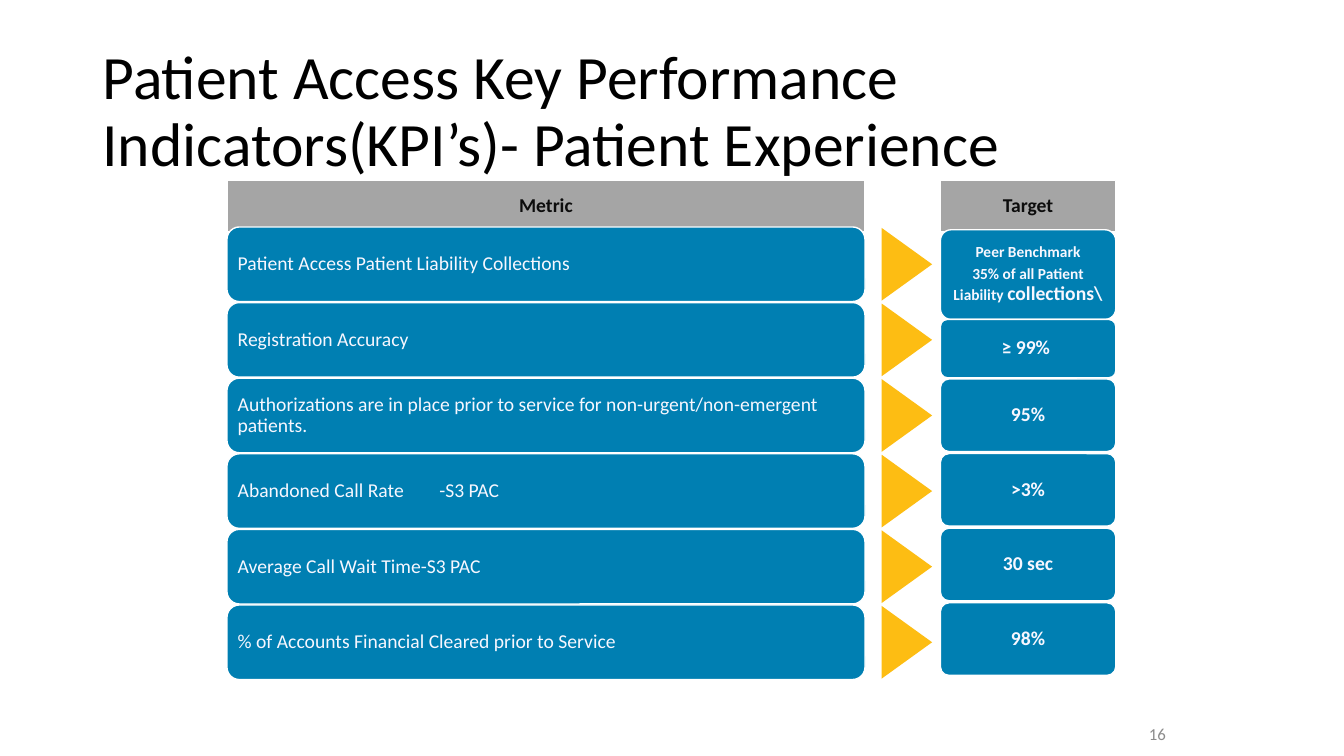
from collections import namedtuple

from pptx import Presentation
from pptx.dml.color import RGBColor
from pptx.enum import shapes, text
from pptx.util import Cm, Pt

BLACK = RGBColor(0x00, 0x00, 0x00)
INK = RGBColor(0x0D, 0x0D, 0x0D)
GRAY = RGBColor(0xA5, 0xA5, 0xA5)
NUMBER_GRAY = RGBColor(0x8C, 0x8C, 0x8C)
BLUE = RGBColor(0x00, 0x7F, 0xB2)
PALE = RGBColor(0xF7, 0xF7, 0xFF)
GOLD = RGBColor(0xFD, 0xBD, 0x13)
WHITE = RGBColor(0xFF, 0xFF, 0xFF)

FONT = "Calibri"
HEADER_HEIGHT = 1.3
CARD_HEIGHT = 1.88

Box = namedtuple("Box", "left top width height")

METRICS = [
    "Patient Access Patient Liability Collections",
    "Registration Accuracy",
    "Authorizations are in place prior to service for non-urgent/non-emergent patients.",
    "Abandoned Call Rate\t-S3 PAC",
    "Average Call Wait Time-S3 PAC",
    "% of Accounts Financial Cleared prior to Service",
]
BENCHMARK = [
    [("Peer Benchmark", 11)],
    [("35% of all Patient Liability ", 11), ("collections\\", 14)],
]
TARGETS = ["≥ 99% ", "95%", ">3%", "30 sec", "98%"]


def lengths(box):
    return [Cm(value) for value in box]


def add_span(para, words, size, color, bold=False):
    span = para.add_run()
    span.text = words
    span.font.name = FONT
    span.font.size = Pt(size)
    span.font.bold = bold
    span.font.color.rgb = color


def add_figure(page, kind, box, fill):
    figure = page.shapes.add_shape(kind, *lengths(box))
    figure.shadow.inherit = False
    figure.fill.solid()
    figure.fill.fore_color.rgb = fill
    figure.line.fill.background()
    return figure


def add_card(page, kind, box, fill, paragraphs, color, bold, align):
    card = add_figure(page, kind, box, fill)
    card.line.color.rgb = WHITE
    card.line.width = Pt(1)
    frame = card.text_frame
    frame.word_wrap = True
    frame.vertical_anchor = text.MSO_ANCHOR.MIDDLE
    frame.margin_left = frame.margin_right = Cm(0.18)
    frame.margin_top = frame.margin_bottom = Cm(0.15)
    for index, spans in enumerate(paragraphs):
        para = frame.add_paragraph() if index else frame.paragraphs[0]
        para.alignment = align
        para.line_spacing = 0.9
        para.space_after = Pt(spans[0][1] * 0.35)
        for words, size in spans:
            add_span(para, words, size, color, bold)
    return card


def add_header(page, box, words):
    add_card(page, shapes.MSO_SHAPE.RECTANGLE, box._replace(height=HEADER_HEIGHT),
             GRAY, [[(words, 14)]], INK, True, text.PP_ALIGN.CENTER)


def add_metrics(page, box):
    add_header(page, box, "Metric")
    first = box.top + 1.17
    pitch = (box.top + box.height - first) / len(METRICS)
    for index, metric in enumerate(METRICS):
        row = Box(box.left, first + index * pitch, box.width, CARD_HEIGHT)
        add_card(page, shapes.MSO_SHAPE.ROUNDED_RECTANGLE, row, BLUE,
                 [[(metric, 14)]], PALE, False, text.PP_ALIGN.LEFT)


def add_targets(page, box):
    add_header(page, box, "Target")
    cards = [BENCHMARK] + [[[(target, 14)]] for target in TARGETS]
    tops = [1.24, 3.5] + [5 + index * 1.88 for index in range(4)]
    heights = [2.26, 1.47] + [1.83] * 4
    for paragraphs, top, height in zip(cards, tops, heights):
        row = Box(box.left, box.top + top, box.width, height)
        card = add_card(page, shapes.MSO_SHAPE.ROUNDED_RECTANGLE, row, BLUE,
                        paragraphs, PALE, True, text.PP_ALIGN.CENTER)
        card.adjustments[0] = 0.12


def add_pointers(page, box):
    pitch = box.height / len(METRICS)
    length = 1.83
    left = box.left + (box.width - length) / 2
    for index in range(len(METRICS)):
        middle = box.top + index * pitch + CARD_HEIGHT / 2
        pointer = add_figure(page, shapes.MSO_SHAPE.ISOSCELES_TRIANGLE,
                             Box(left, middle - box.width / 2, length, box.width), GOLD)
        pointer.rotation = 90


def add_title(page, box):
    title = page.shapes.title
    title.left, title.top, title.width, title.height = lengths(box)
    frame = title.text_frame
    frame.word_wrap = True
    frame.vertical_anchor = text.MSO_ANCHOR.MIDDLE
    para = frame.paragraphs[0]
    para.alignment = text.PP_ALIGN.LEFT
    para.line_spacing = 0.9
    add_span(para, "Patient Access Key Performance Indicators(KPI’s)- Patient Experience",
             44, BLACK)


def add_page_number(page, box):
    frame = page.shapes.add_textbox(*lengths(box)).text_frame
    frame.word_wrap = True
    frame.vertical_anchor = text.MSO_ANCHOR.MIDDLE
    para = frame.paragraphs[0]
    para.alignment = text.PP_ALIGN.RIGHT
    add_span(para, "16", 12, NUMBER_GRAY)


def main():
    deck = Presentation()
    deck.slide_width, deck.slide_height = Cm(33.87), Cm(19.05)
    page = deck.slides.add_slide(deck.slide_layouts[5])
    add_title(page, Box(2.33, 1.01, 29.21, 3.68))
    add_page_number(page, Box(23.71, 17.98, 5.92, 1.01))
    add_metrics(page, Box(5.72, 4.55, 16.08, 12.6))
    add_targets(page, Box(23.7, 4.55, 4.42, 12.6))
    add_pointers(page, Box(22.22, 5.72, 1.27, 11.43))
    deck.save("out.pptx")


if __name__ == "__main__":
    main()
